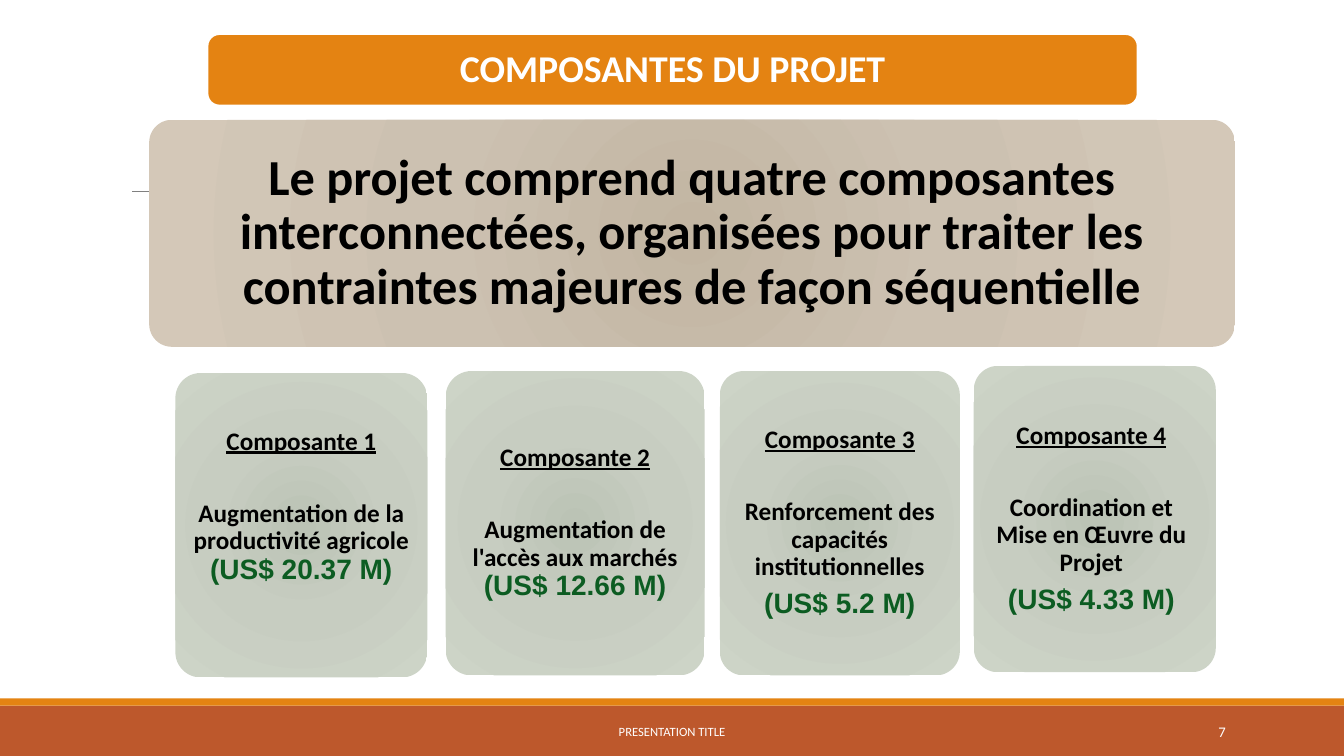
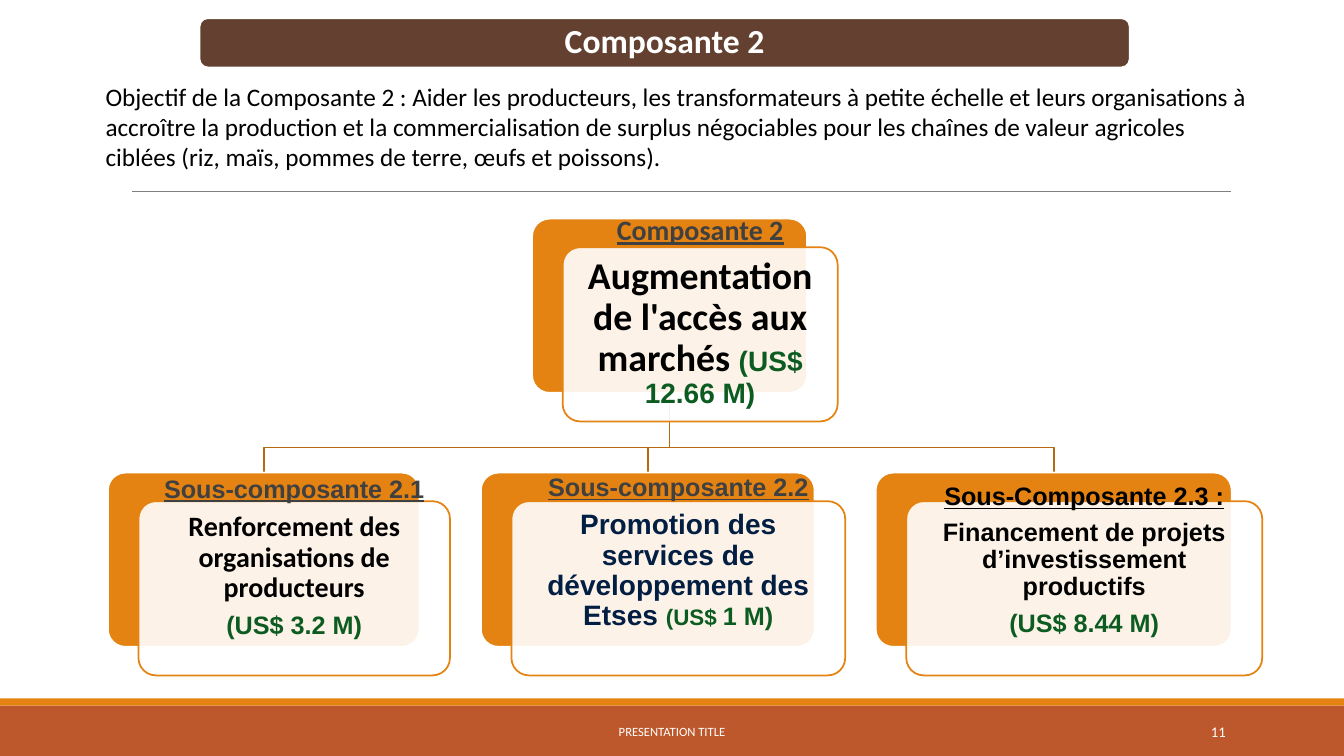
from lxml.etree import SubElement
from pptx import Presentation
from pptx.dml.color import RGBColor
from pptx.enum.shapes import MSO_CONNECTOR, MSO_SHAPE
from pptx.enum.text import MSO_ANCHOR, PP_ALIGN
from pptx.oxml import parse_xml
from pptx.oxml.ns import nsdecls, qn
from pptx.util import Cm, Pt

WHITE = RGBColor(0xFF, 0xFF, 0xFF)
BLACK = RGBColor(0x00, 0x00, 0x00)
GRAY = RGBColor(0x80, 0x80, 0x80)
CHARCOAL = RGBColor(0x40, 0x40, 0x40)
ORANGE = RGBColor(0xE4, 0x83, 0x12)
RUST = RGBColor(0xBD, 0x58, 0x2C)
BROWN = RGBColor(0x63, 0x40, 0x2F)
BRONZE = RGBColor(0xB7, 0x69, 0x0E)
GREEN = RGBColor(0x0C, 0x5C, 0x22)
NAVY = RGBColor(0x02, 0x1F, 0x43)
# Radial blends, from the centre outwards
SAND = [RGBColor(0xC2, 0xB5, 0xA2), RGBColor(0xCC, 0xC1, 0xB1), RGBColor(0xD4, 0xC8, 0xB8)]
SAGE = [RGBColor(0xBB, 0xC3, 0xB5), RGBColor(0xC7, 0xCD, 0xC1), RGBColor(0xCD, 0xD4, 0xC7)]

ROUNDED = MSO_SHAPE.ROUNDED_RECTANGLE
TOP, MIDDLE = MSO_ANCHOR.TOP, MSO_ANCHOR.MIDDLE
LEFT, CENTER, RIGHT = PP_ALIGN.LEFT, PP_ALIGN.CENTER, PP_ALIGN.RIGHT


def add_box(page, place, kind=None, fill=None, line=None, corner=None, opacity=100,
            anchor=MIDDLE, margins=(0.25, 0.13, 0.25, 0.13)):
    """Add a preset shape, or a text box when kind is None; a list as fill is a radial blend."""
    place = [Cm(length) for length in place]
    if kind is None:
        box = page.shapes.add_textbox(*place)
    else:
        box = page.shapes.add_shape(kind, *place)
        box.shadow.inherit = False
        if corner is not None:
            box.adjustments[0] = corner
        if isinstance(fill, list):
            stops = "".join(
                f'<a:gs pos="{spot}000"><a:srgbClr val="{color}"/></a:gs>'
                for spot, color in zip((0, 45, 100), fill))
            blend = parse_xml(
                f'<a:gradFill {nsdecls("a")} rotWithShape="1"><a:gsLst>{stops}</a:gsLst>'
                '<a:path path="circle"><a:fillToRect l="100000" t="100000" r="100000" '
                'b="100000"/></a:path></a:gradFill>')
            box.fill.background()
            properties = box.element.spPr
            properties.replace(properties.find(qn("a:noFill")), blend)
        else:
            box.fill.solid()
            box.fill.fore_color.rgb = fill
            if opacity < 100:
                color = box.element.spPr.find(qn("a:solidFill")).find(qn("a:srgbClr"))
                SubElement(color, qn("a:alpha"), val=str(opacity * 1000))
        if line is None:
            box.line.fill.background()
        else:
            box.line.color.rgb = line
            box.line.width = Pt(1.25)
    frame = box.text_frame
    frame.word_wrap = True
    frame.vertical_anchor = anchor
    (frame.margin_left, frame.margin_top,
     frame.margin_right, frame.margin_bottom) = [Cm(margin) for margin in margins]
    return box


def write(box, text, size=18, font="Calibri", color=BLACK, bold=True, underline=False,
          align=CENTER, spacing=0.9, gap=None, join=False):
    """Add a paragraph, or a span to the last one if join; gap is the space after, in points."""
    frame = box.text_frame
    para = frame.paragraphs[-1]
    if not join:
        if para.runs:
            para = frame.add_paragraph()
        para.alignment = align
        para.line_spacing = spacing
        para.space_after = Pt(round(0.35 * size, 1) if gap is None else gap)
    span = para.add_run()
    span.text = text
    span.font.size = Pt(size)
    span.font.name = font
    span.font.color.rgb = color
    span.font.bold = bold
    span.font.underline = underline


deck = Presentation()
deck.slide_width, deck.slide_height = Cm(33.87), Cm(19.05)

# Shared parts: bands, rule, footer, page number and title bar
titles = [
    (7, "COMPOSANTES DU PROJET", 27, ORANGE, (5.23, 0.86, 23.44, 1.8)),
    (11, "Composante 2", 24, BROWN, (5.03, 0.46, 23.44, 1.24)),
]
pages = []
for number, title, size, color, place in titles:
    page = deck.slides.add_slide(deck.slide_layouts[6])
    pages.append(page)
    add_box(page, (0, 17.78, 33.87, 1.27), MSO_SHAPE.RECTANGLE, RUST)
    add_box(page, (0, 17.6, 33.87, 0.18), MSO_SHAPE.RECTANGLE, ORANGE)
    rule = page.shapes.add_connector(
        MSO_CONNECTOR.STRAIGHT, Cm(3.33), Cm(4.83), Cm(31.01), Cm(4.83))
    rule.line.color.rgb = GRAY
    rule.line.width = Pt(0.5)
    SubElement(rule.element.spPr, qn("a:effectLst"))
    footer = add_box(page, (10.24, 17.93, 13.39, 1.02))
    write(footer, "PRESENTATION TITLE", size=9, color=WHITE, bold=False, spacing=1, gap=0)
    counter = add_box(page, (27.51, 17.93, 3.63, 1.02))
    write(counter, str(number), size=10.5, color=WHITE, bold=False, align=RIGHT,
          spacing=1, gap=0)
    bar = add_box(page, place, ROUNDED, color, WHITE)
    write(bar, title, size=size, color=WHITE)

overview, detail = pages

# Overview: a statement above four component cards
statement = add_box(overview, (3.76, 3.02, 27.36, 5.72), ROUNDED, SAND, corner=0.1,
                    margins=(0.38, 0.38, 0.38, 0.38))
write(statement, "Le projet comprend quatre composantes interconnectées, organisées pour "
      "traiter les contraintes majeures de façon séquentielle", size=36)

EVEN = (0.18, 0.18, 0.18, 0.18)
cards = [
    ((4.42, 9.4, 6.35, 7.67), (0.18, 0.18, 0.18, 1.1),
     "Augmentation de la productivité agricole ", "(US$ 20.37 M)", True),
    ((11.23, 9.35, 6.53, 7.67), EVEN,
     "Augmentation de l'accès aux marchés ", "(US$ 12.66 M)", True),
    ((18.14, 9.35, 6.05, 7.67), EVEN,
     "Renforcement des capacités institutionnelles", "(US$ 5.2 M)", False),
    ((24.54, 9.22, 6.1, 7.72), (0.1, 0.18, 0.27, 0.18),
     "Coordination et Mise en Œuvre du Projet", "(US$ 4.33 M)", False),
]
for number, (place, margins, name, amount, join) in enumerate(cards, 1):
    card = add_box(overview, place, ROUNDED, SAGE, corner=0.1, margins=margins)
    write(card, f"Composante {number}", underline=True, gap=32.4)
    write(card, name)
    write(card, amount, size=20, font="Arial", color=GREEN, join=join)

# Detail: the objective and a tree of sub-components
objective = add_box(detail, (2.41, 1.91, 29.46, 2.57), anchor=TOP)
write(objective, "Objectif de la Composante 2 : Aider les producteurs, les transformateurs à "
      "petite échelle et leurs organisations à accroître la production et la "
      "commercialisation de surplus négociables pour les chaînes de valeur agricoles ciblées "
      "(riz, maïs, pommes de terre, œufs et poissons).",
      bold=False, align=LEFT, spacing=1, gap=0)

TILE_HEIGHT, SHIFT_X, SHIFT_Y = 4.39, 0.77, 0.72
ROOT_TOP, CHILD_TOP, BEND = 5.51, 11.91, 11.28
ARIAL_GREEN = dict(font="Arial", color=GREEN)
# Left, top, width, top of the text, then the spans
nodes = [
    (13.41, ROOT_TOP, 6.93, 5.46, [
        ("Composante 2", dict(size=20, color=CHARCOAL, underline=True)),
        ("Augmentation de l'accès aux marchés ", dict(size=27)),
        ("(US$ 12.66 M)", dict(size=20, join=True, **ARIAL_GREEN))]),
    (2.72, CHILD_TOP, 7.85, 12.01, [
        ("Sous-composante 2.1", dict(font="Arial", color=CHARCOAL, underline=True)),
        ("Renforcement des organisations de producteurs", dict(size=20)),
        ("(US$ 3.2 M)", ARIAL_GREEN)]),
    (12.12, CHILD_TOP, 8.41, 11.96, [
        ("Sous-composante 2.2", dict(font="Arial", color=CHARCOAL, underline=True)),
        ("Promotion des services de développement des Etses ",
         dict(size=20, font="Arial", color=NAVY)),
        ("(US$ ", dict(size=16, join=True, **ARIAL_GREEN)),
        ("1 M)", dict(join=True, **ARIAL_GREEN))]),
    (22.07, CHILD_TOP, 8.97, 12.19, [
        ("Sous-Composante 2.3 :", dict(font="Arial", underline=True)),
        ("Financement de projets d’investissement productifs", dict(font="Arial")),
        ("(US$ 8.44 M)", ARIAL_GREEN)]),
]

root_left, root_top, root_width = nodes[0][:3]
trunk = Cm(root_left + root_width / 2)
for left, top, width, *_ in nodes[1:]:
    middle = Cm(left + width / 2)
    outline = detail.shapes.build_freeform(trunk, Cm(root_top + TILE_HEIGHT))
    outline.add_line_segments(
        [(trunk, Cm(BEND)), (middle, Cm(BEND)), (middle, Cm(top))], close=False)
    branch = outline.convert_to_shape()
    branch.shadow.inherit = False
    branch.fill.background()
    branch.line.color.rgb = BRONZE
    branch.line.width = Pt(1.25)

for left, top, width, text_top, spans in nodes:
    front_left, front_top = left + SHIFT_X, top + SHIFT_Y
    add_box(detail, (left, top, width, TILE_HEIGHT), ROUNDED, ORANGE, WHITE, corner=0.1)
    add_box(detail, (front_left, front_top, width, TILE_HEIGHT), ROUNDED, WHITE, ORANGE,
            corner=0.1, opacity=90)
    label = add_box(
        detail, (front_left + 0.13, text_top, width - 0.26, front_top + TILE_HEIGHT - text_top),
        anchor=TOP, margins=(0.18, 0, 0.18, 0))
    for text, style in spans:
        write(label, text, **style)

deck.save("out.pptx")
